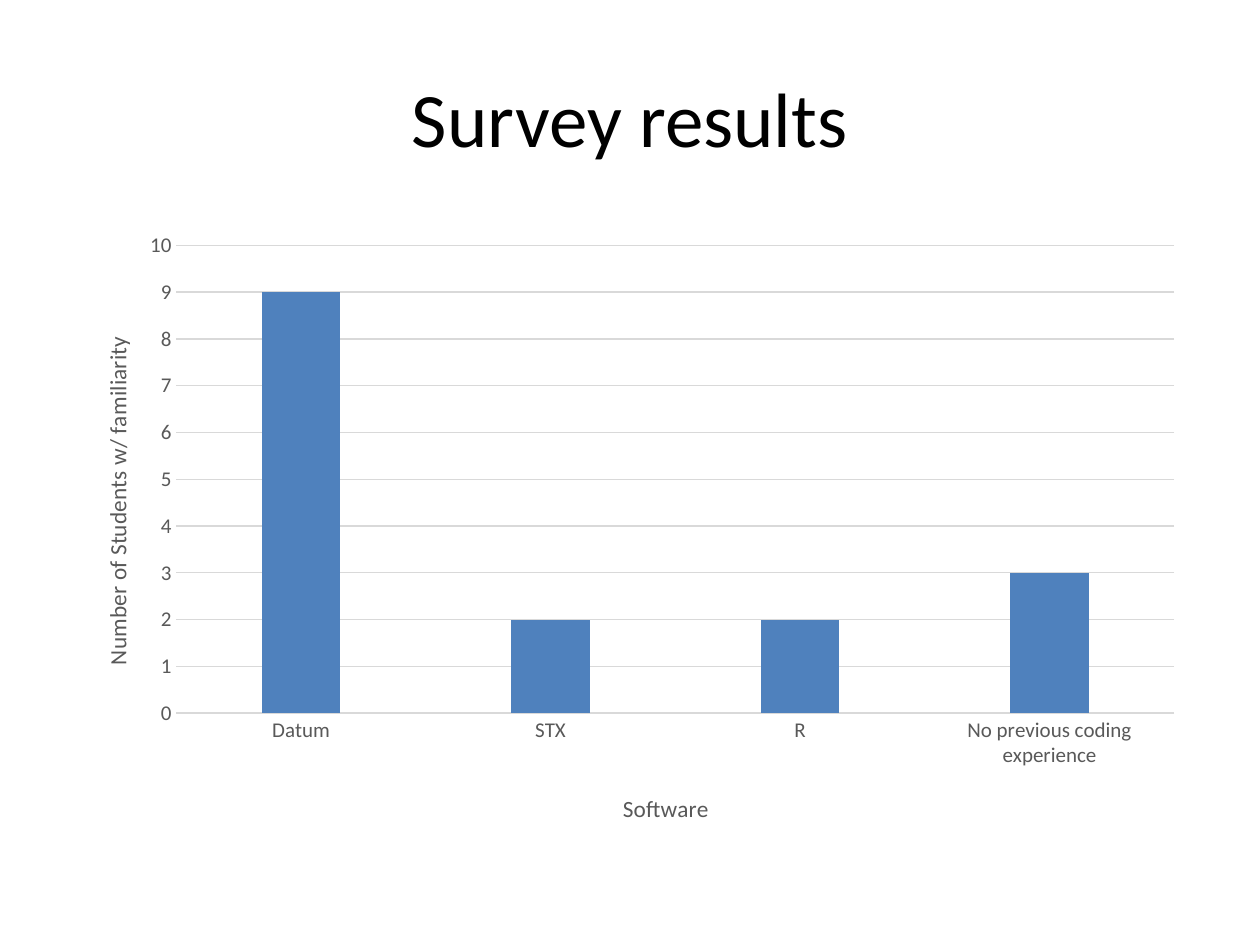
from lxml import etree
from pptx import Presentation
from pptx.chart.data import CategoryChartData
from pptx.dml.color import RGBColor
from pptx.enum.chart import XL_CHART_TYPE, XL_TICK_MARK
from pptx.enum.text import MSO_ANCHOR, PP_ALIGN
from pptx.oxml.ns import qn
from pptx.util import Inches, Pt

COLUMN = XL_CHART_TYPE.COLUMN_CLUSTERED
NONE = XL_TICK_MARK.NONE
CENTER = PP_ALIGN.CENTER
MIDDLE = MSO_ANCHOR.MIDDLE
WIDE, HIGH = Inches(10), Inches(7.5)
FONT, BLACK, GRAY, PALE, BLUE = "Calibri", "000000", "595959", "D9D9D9", "4F81BD"
COUNTS = {"Datum": 9, "STX": 2, "R": 2, "No previous coding experience": 3}


def color(code):
    """Turn a hex string into a colour."""
    return RGBColor.from_string(code)


def style(font, size, code):
    """Set the face, size and colour of a font."""
    font.name, font.size, font.bold = FONT, Pt(size), False
    font.color.rgb = color(code)


def rule(line):
    """Draw a thin pale line."""
    line.color.rgb = color(PALE)
    line.width = Pt(0.75)


def place(part, index, **spots):
    """Fix a chart part at shares of the chart's size."""
    for old in part.findall(qn("c:layout")):
        part.remove(old)
    layout = etree.Element(qn("c:layout"))
    manual = etree.SubElement(layout, qn("c:manualLayout"))
    if "w" in spots:
        etree.SubElement(manual, qn("c:layoutTarget"), val="inner")
    for key in ("x", "y"):
        etree.SubElement(manual, qn(f"c:{key}Mode"), val="edge")
    for key, share in spots.items():
        etree.SubElement(manual, qn(f"c:{key}"), val=str(share))
    part.insert(index, layout)


def add_title(slide, text):
    """Fill the title placeholder."""
    title = slide.shapes.title
    title.left, title.top = int(WIDE * 0.05), int(HIGH * 0.04)
    title.width, title.height = int(WIDE * 0.9), Inches(1.25)
    frame = title.text_frame
    frame.text = text
    frame.vertical_anchor = MIDDLE
    para = frame.paragraphs[0]
    para.alignment = CENTER
    style(para.font, 44, BLACK)


def set_axis(axis, text, x, y):
    """Format an axis and place its title."""
    axis.major_tick_mark = axis.minor_tick_mark = NONE
    style(axis.tick_labels.font, 12, GRAY)
    frame = axis.axis_title.text_frame
    frame.text = text
    style(frame.paragraphs[0].font, 13.3, GRAY)
    place(axis.axis_title._element, 1, x=x, y=y)


def add_bars(slide):
    """Add the column chart of the survey."""
    data = CategoryChartData()
    data.categories = list(COUNTS)
    data.add_series("Series 1", list(COUNTS.values()))
    box = int(WIDE * 0.05), Inches(1.75), int(WIDE * 0.9), int(HIGH * 0.66)
    chart = slide.shapes.add_chart(COLUMN, *box, data).chart
    chart.has_title = chart.has_legend = False
    style(chart.font, 10, BLACK)
    plot = chart.plots[0]
    plot.gap_width, plot.overlap, plot.vary_by_categories = 219, -27, False
    fill = plot.series[0].format.fill
    fill.solid()
    fill.fore_color.rgb = color(BLUE)
    cats, vals = chart.category_axis, chart.value_axis
    set_axis(cats, "Software", 0.49, 0.91)
    set_axis(vals, "Number of Students w/ familiarity", 0.03, 0.18)
    rule(cats.format.line)
    rule(vals.major_gridlines.format.line)
    vals.format.line.fill.background()
    vals.minimum_scale, vals.maximum_scale, vals.major_unit = 0, 10, 1
    area = chart._chartSpace.find(".//" + qn("c:plotArea"))
    place(area, 0, x=0.1, y=0.04, w=0.88, h=0.75)


def main():
    """Build and save the slide."""
    deck = Presentation()
    deck.slide_width, deck.slide_height = WIDE, HIGH
    slide = deck.slides.add_slide(deck.slide_layouts[5])
    add_title(slide, "Survey results")
    add_bars(slide)
    deck.save("out.pptx")


if __name__ == "__main__":
    main()
